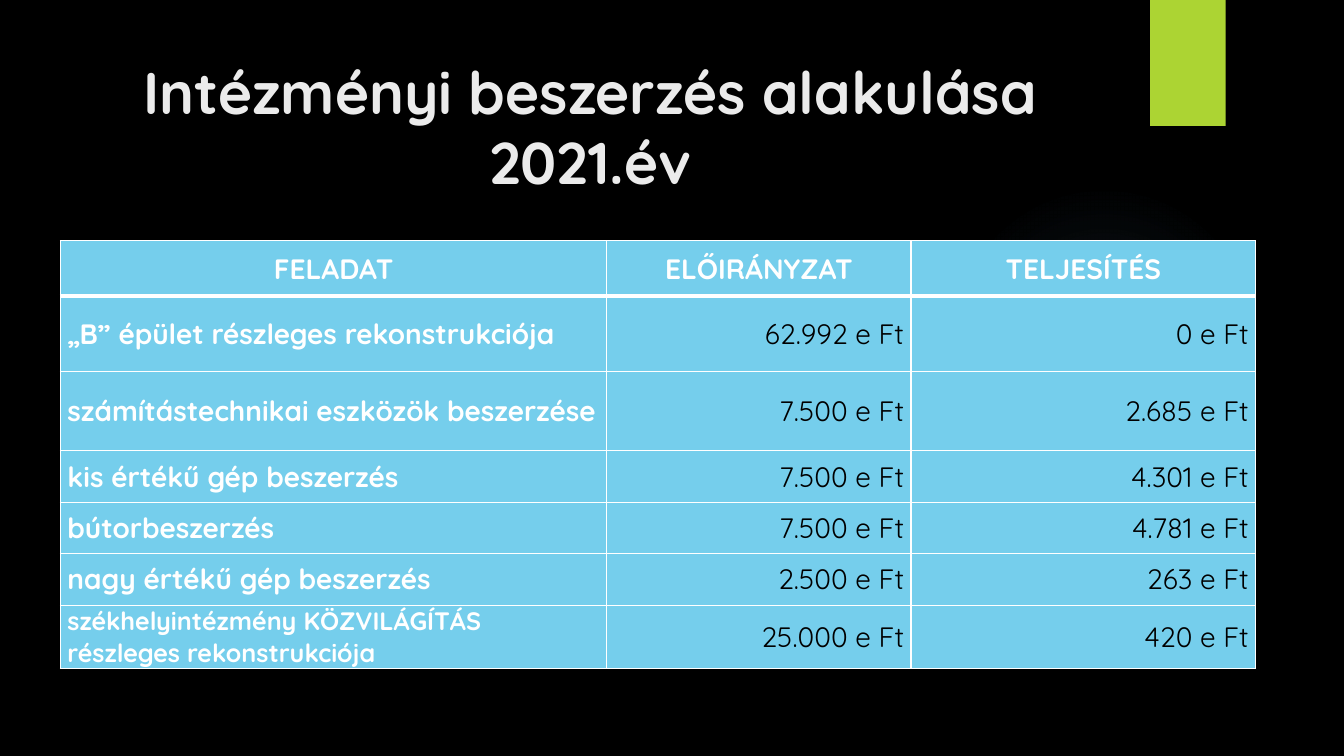
"""Builds the slide on institutional purchases in 2021."""
from lxml import etree
from pptx import Presentation, util as u
from pptx.dml.color import RGBColor
from pptx.enum import shapes, text
from pptx.oxml.ns import qn

TITLE = "Intézményi beszerzés alakulása\v2021.év"
ROWS = [
    ("FELADAT", "ELŐIRÁNYZAT", "TELJESÍTÉS"),
    ("„B” épület részleges rekonstrukciója", "62.992 e Ft", "0 e Ft"),
    ("számítástechnikai eszközök beszerzése", "7.500 e Ft", "2.685 e Ft"),
    ("kis értékű gép beszerzés", "7.500 e Ft", "4.301 e Ft"),
    ("bútorbeszerzés", "7.500 e Ft", "4.781 e Ft"),
    ("nagy értékű gép beszerzés", "2.500 e Ft", "263 e Ft"),
    ("székhelyintézmény KÖZVILÁGÍTÁS részleges rekonstrukciója", "25.000 e Ft", "420 e Ft"),
]
WIDTHS = (390.2, 217.4, 246.2)
HEIGHTS = (39.6, 54, 56.2, 37.4, 36, 37.4, 45)
GLOW = [(0, 7), (36, 6), (69, 0), (100, 0)]
BLACK, WHITE, SKY, LIME = "000000", "FFFFFF", "75CEEC", "ACD433"
GLOW_BLUE, TITLE_GREY = "7AC4F0", "EBEBEB"
CELL = {"margin_left": u.Pt(5), "margin_right": u.Pt(5), "margin_top": 0,
        "margin_bottom": 0, "vertical_anchor": text.MSO_ANCHOR.MIDDLE}
HEADING = {"size": u.Pt(20), "bold": True}
AMOUNT = {"size": u.Pt(20), "bold": False}
SMALL = {"size": u.Pt(18), "bold": True}


def rgb(value):
    return RGBColor.from_string(value)


def paint(fill, value):
    fill.solid()
    fill.fore_color.rgb = rgb(value)


def apply(target, values):
    for name, value in values.items():
        setattr(target, name, value)


def write(p, content, align, font, color):
    p.text = content
    p.alignment = align
    for r in p.runs:
        apply(r.font, {"name": "Quicksand", **font})
        r.font.color.rgb = rgb(color)


def add_block(s, kind, left, top, width, height, color):
    sp = s.shapes.add_shape(kind, *map(u.Pt, (left, top, width, height)))
    sp.shadow.inherit = False
    sp.line.fill.background()
    paint(sp.fill, color)
    return sp


def add_glow(sp):
    solid = sp._element.spPr.find(qn("a:solidFill"))
    grad = etree.Element(qn("a:gradFill"), rotWithShape="1")
    stops = etree.SubElement(grad, qn("a:gsLst"))
    for place, alpha in GLOW:
        gs = etree.SubElement(stops, qn("a:gs"), pos=str(place * 1000))
        clr = etree.SubElement(gs, qn("a:srgbClr"), val=GLOW_BLUE)
        etree.SubElement(clr, qn("a:alpha"), val=str(alpha * 1000))
    circle = etree.SubElement(grad, qn("a:path"), path="circle")
    etree.SubElement(circle, qn("a:fillToRect"), l="50000", t="50000", r="50000", b="50000")
    solid.getparent().replace(solid, grad)


def add_borders(cell, top, bottom):
    tc_pr = cell._tc.get_or_add_tcPr()
    for i, (side, width) in enumerate((("L", 1), ("R", 1), ("T", top), ("B", bottom))):
        ln = etree.Element(qn(f"a:ln{side}"), w=str(u.Pt(width)))
        solid = etree.SubElement(ln, qn("a:solidFill"))
        etree.SubElement(solid, qn("a:srgbClr"), val=WHITE)
        tc_pr.insert(i, ln)


def add_budget(s):
    frame = s.shapes.add_table(len(ROWS), len(WIDTHS), u.Pt(43.2), u.Pt(172),
                               u.Pt(sum(WIDTHS)), u.Pt(sum(HEIGHTS)))
    table = frame.table
    for col, width in zip(table.columns, WIDTHS):
        col.width = u.Pt(width)
    for row, height in zip(table.rows, HEIGHTS):
        row.height = u.Pt(height)
    al = text.PP_ALIGN
    last = len(ROWS) - 1
    for i, row in enumerate(ROWS):
        for j, content in enumerate(row):
            cell = table.cell(i, j)
            apply(cell, CELL)
            paint(cell.fill, SKY)
            add_borders(cell, 3 if i == 1 else 1, 3 if i == 0 else 1)
            if i == 0:
                style = al.CENTER, HEADING, WHITE
            elif j > 0:
                style = al.RIGHT, AMOUNT, BLACK
            elif i == last:
                style = al.LEFT, SMALL, WHITE
            else:
                style = al.JUSTIFY, HEADING, WHITE
            write(cell.text_frame.paragraphs[0], content, *style)


def main():
    prs = Presentation()
    prs.slide_width, prs.slide_height = u.Pt(960), u.Pt(540)
    s = prs.slides.add_slide(prs.slide_layouts[6])
    paint(s.background.fill, BLACK)
    kinds = shapes.MSO_SHAPE
    add_glow(add_block(s, kinds.OVAL, 677.5, 131.8, 221.8, 221.8, GLOW_BLUE))
    add_block(s, kinds.RECTANGLE, 821.5, 0, 54, 90, LIME)
    tf = s.shapes.add_textbox(u.Pt(51.1), u.Pt(36), u.Pt(740.9), u.Pt(72.7)).text_frame
    tf.word_wrap = True
    write(tf.paragraphs[0], TITLE, text.PP_ALIGN.CENTER,
          {"size": u.Pt(42), "bold": True}, TITLE_GREY)
    add_budget(s)
    prs.save("out.pptx")


if __name__ == "__main__":
    main()
